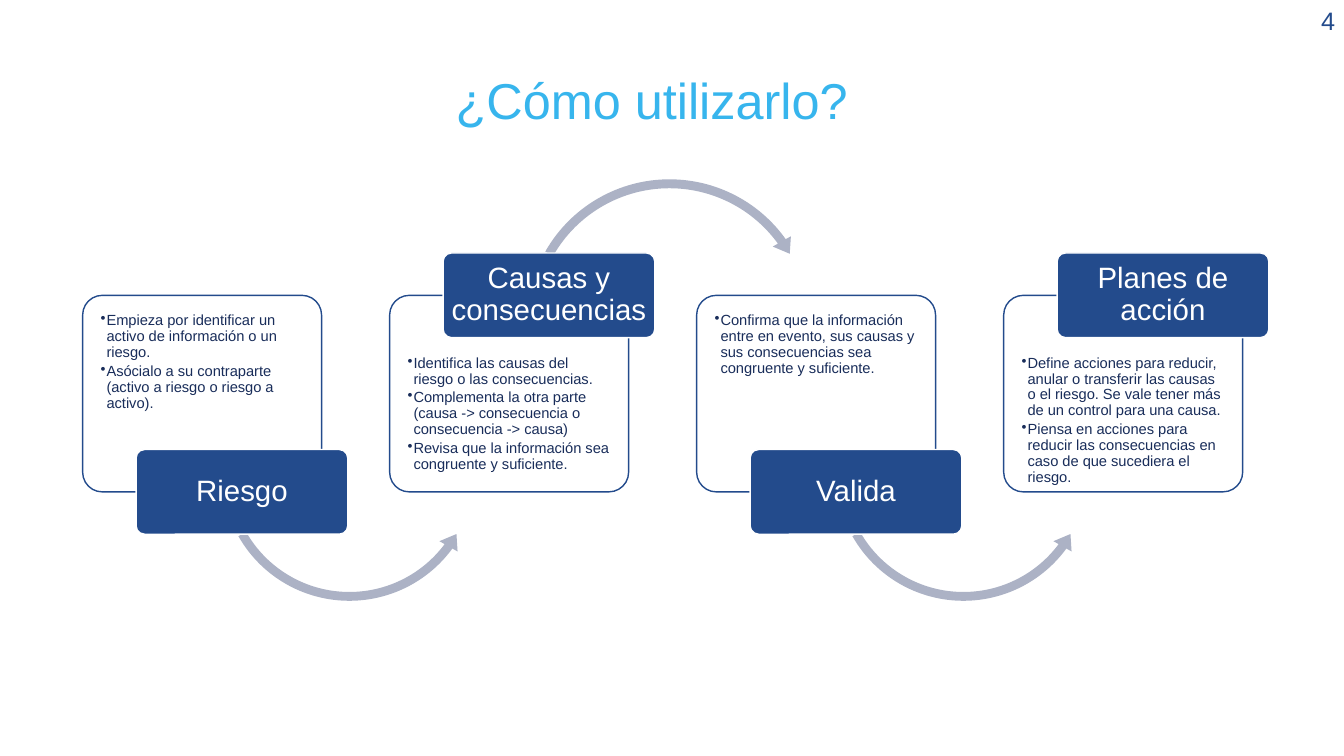
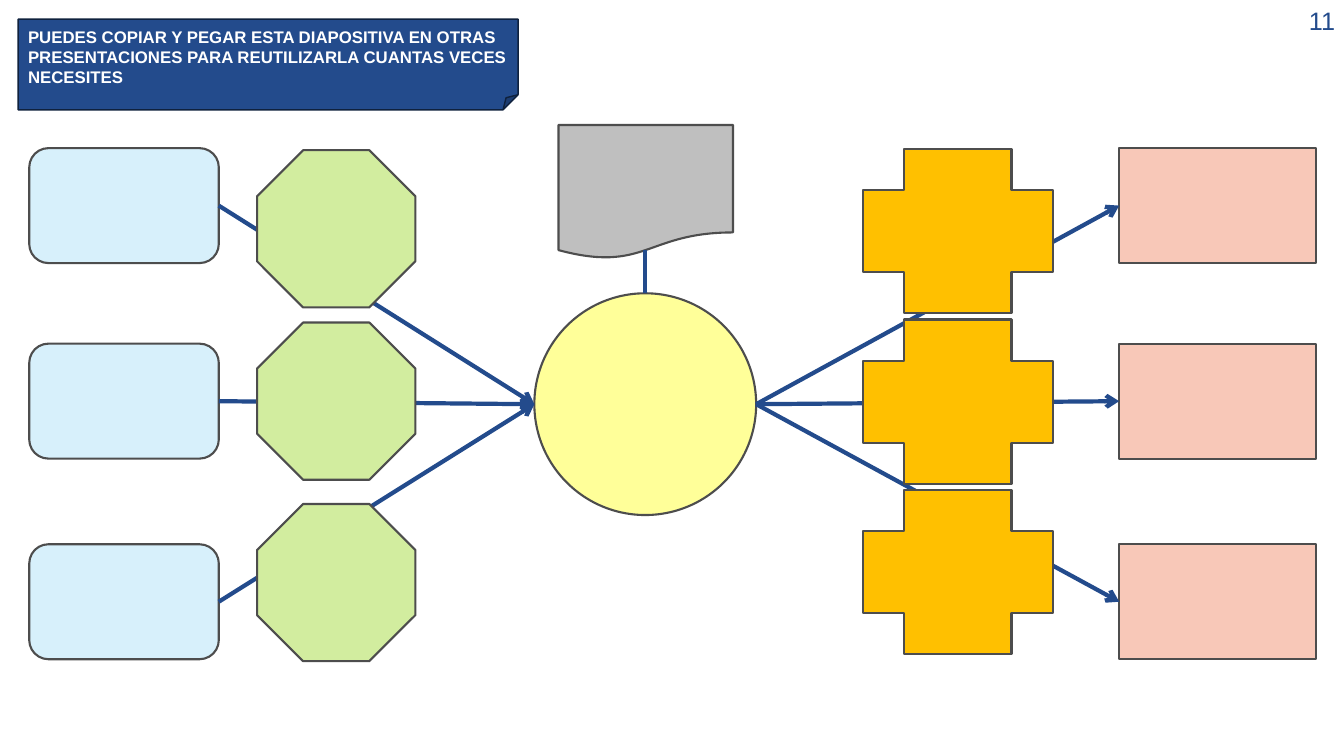
from dataclasses import dataclass

from lxml.etree import SubElement
from pptx import Presentation
from pptx.dml.color import RGBColor
from pptx.enum.shapes import MSO_CONNECTOR, MSO_SHAPE as SHP
from pptx.enum.text import MSO_ANCHOR as ANC, PP_ALIGN as AL
from pptx.oxml.ns import qn
from pptx.util import Inches, Pt


@dataclass(frozen=True)
class Theme:
    font: str = "Arial"
    # Colours
    navy: str = "234B8C"
    sky: str = "37B5ED"
    ink: str = "192D5A"
    white: str = "FFFFFF"
    arrow: str = "ACB2C5"
    outline: str = "4D4D4D"
    note_line: str = "0F213D"
    cause: str = "D7F0FB"
    prevention: str = "D2ED9F"
    event: str = "FFFF99"
    source: str = "BFBFBF"
    mitigation: str = "FFC000"
    effect: str = "F8C8B8"
    # Type sizes
    title_pt: float = 36
    label_pt: float = 21
    number_pt: float = 18
    note_pt: float = 12
    body_pt: float = 10.5


T = Theme()

STEPS = [
    ("Riesgo", [
        "Empieza por identificar un activo de información o un riesgo.",
        "Asócialo a su contraparte (activo a riesgo o riesgo a activo)."]),
    ("Causas y consecuencias", [
        "Identifica las causas del riesgo o las consecuencias.",
        "Complementa la otra parte (causa -> consecuencia o consecuencia -> causa)",
        "Revisa que la información sea congruente y suficiente."]),
    ("Valida", [
        "Confirma que la información entre en evento, sus causas y sus "
        "consecuencias sea congruente y suficiente."]),
    ("Planes de acción", [
        "Define acciones para reducir, anular o transferir las causas o el riesgo. "
        "Se vale tener más de un control para una causa.",
        "Piensa en acciones para reducir las consecuencias en caso de que "
        "sucediera el riesgo."]),
]
NOTE = ("PUEDES COPIAR Y PEGAR ESTA DIAPOSITIVA EN OTRAS PRESENTACIONES "
        "PARA REUTILIZARLA CUANTAS VECES NECESITES")


def rgb(color):
    return RGBColor.from_string(color)


# Shared building blocks
def add_shape(s, kind, box, fill, line=None, width=1.5, adj=()):
    sp = s.shapes.add_shape(kind, *map(Inches, box))
    sp.shadow.inherit = False
    sp.fill.solid()
    sp.fill.fore_color.rgb = rgb(fill)
    if line:
        sp.line.color.rgb = rgb(line)
        sp.line.width = Pt(width)
    else:
        sp.line.fill.background()
    for i, value in enumerate(adj):
        sp.adjustments[i] = value
    return sp


def write(sp, texts, size, color, align=AL.LEFT, anchor=ANC.TOP,
          insets=(0.1, 0.05, 0.1, 0.05), spacing=1, bold=False):
    tf = sp.text_frame
    tf.word_wrap = True
    tf.vertical_anchor = anchor
    (tf.margin_left, tf.margin_top,
     tf.margin_right, tf.margin_bottom) = map(Inches, insets)
    for i, text in enumerate(texts):
        p = tf.add_paragraph() if i else tf.paragraphs[0]
        p.text = text
        p.alignment = align
        p.line_spacing = spacing
        p.font.name = T.font
        p.font.size = Pt(size)
        p.font.bold = bold
        p.font.color.rgb = rgb(color)
    return tf


def add_text(s, box, text, size, color, **style):
    tb = s.shapes.add_textbox(*map(Inches, box))
    write(tb, [text], size, color, **style)


def set_bullet(p):
    p.space_after = Pt(2)
    pPr = p._p.get_or_add_pPr()
    pPr.set("marL", str(Inches(0.06)))
    pPr.set("indent", str(-Inches(0.06)))
    bullet = pPr.makeelement(qn("a:buChar"), {"char": "•"})
    pPr.insert_element_before(bullet, "a:tabLst", "a:defRPr", "a:extLst")


def add_link(s, start, end, arrow=True):
    c = s.shapes.add_connector(MSO_CONNECTOR.STRAIGHT, *map(Inches, start + end))
    c.line.color.rgb = rgb(T.navy)
    c.line.width = Pt(3)
    if arrow:
        SubElement(c.line._get_or_add_ln(), qn("a:tailEnd"), type="arrow")
    SubElement(c._element.spPr, qn("a:effectLst"))
    return c


def new_slide(prs, number):
    s = prs.slides.add_slide(prs.slide_layouts[6])
    add_text(s, (12.42, 0, 0.92, 0.42), number, T.number_pt, T.navy, align=AL.RIGHT)
    return s


# Process slide
def add_step(s, x, y, label, bullets, label_on_top, last):
    # Card with bullets
    card = add_shape(s, SHP.ROUNDED_RECTANGLE, (x, y, 2.37, 1.95),
                     T.white, T.navy, 1, [0.1])
    solid = card._element.spPr.find(qn("a:solidFill"))
    SubElement(solid[0], qn("a:alpha"), val="90000")
    top = 0.54 if label_on_top else 0.12
    tf = write(card, bullets, T.body_pt, T.ink,
               insets=(0.12, top, 0.13, 0), spacing=0.9)
    for p in tf.paragraphs:
        set_bullet(p)
    # Curved arrow to the next step
    if not last and label_on_top:
        add_shape(s, SHP.CIRCULAR_ARROW, (x + 1.3, y - 1.21, 2.95, 2.95), T.arrow,
                  adj=[0.03, 3.64, 194.6, 125.76, 0.035])
    elif not last:
        add_shape(s, SHP.LEFT_CIRCULAR_ARROW, (x + 1.32, y + 0.44, 2.65, 2.65), T.arrow,
                  adj=[0.033, 4.09, 21.84, 90.25, 0.039])
    # Label
    tag = add_shape(s, SHP.ROUNDED_RECTANGLE,
                    (x + 0.53, y + (-0.42 if label_on_top else 1.53), 2.1, 0.84),
                    T.navy, T.white, 1, [0.1])
    write(tag, [label], T.label_pt, T.white, align=AL.CENTER, anchor=ANC.MIDDLE,
          insets=(0.04, 0.03, 0.04, 0.03), spacing=0.9)


def process_slide(prs):
    s = new_slide(prs, "4")
    add_text(s, (0, 0, 13.33, 2.04), "¿Cómo utilizarlo?", T.title_pt, T.sky,
             align=AL.CENTER, anchor=ANC.MIDDLE,
             insets=(0.39, 0.39, 0.79, 0.39), spacing=0.9)
    left, top, pitch = 0.82, 2.93, 3.045
    for i, (label, bullets) in enumerate(STEPS):
        add_step(s, left + i * pitch, top, label, bullets,
                 label_on_top=i % 2 == 1, last=i == len(STEPS) - 1)


# Bow-tie slide
def add_column(s, kind, x, tops, size, fill):
    return [add_shape(s, kind, (x, y) + size, fill, T.outline) for y in tops]


def add_bow_tie(s, x, y):
    """Place causes, event and effects from the top left corner (x, y)."""
    # Event and its source
    event_x, event_y, d = x + 5.01, y + 1.44, 2.2
    mid_x, mid_y = event_x + d / 2, event_y + d / 2
    add_shape(s, SHP.FLOWCHART_CONNECTOR, (event_x, event_y, d, d), T.event, T.outline)
    add_shape(s, SHP.FLOWCHART_DOCUMENT, (x + 5.25, y - 0.23, 1.73, 1.33),
              T.source, T.outline)
    add_link(s, (mid_x, y + 1.01), (mid_x, event_y), arrow=False)

    # Causes and effects
    tops = [y, y + 1.94, y + 3.93]
    causes = add_column(s, SHP.ROUNDED_RECTANGLE, x, tops, (1.88, 1.14), T.cause)
    effects = add_column(s, SHP.RECTANGLE, x + 10.81, tops, (1.95, 1.14), T.effect)
    for top, cause, effect in zip(tops, causes, effects):
        row_y = top + 0.57
        inward = add_link(s, (x + 1.88, row_y), (event_x, mid_y))
        inward.begin_connect(cause, 3)
        outward = add_link(s, (event_x + d, mid_y), (x + 10.81, row_y))
        outward.end_connect(effect, 1)

    # Controls over the links
    add_column(s, SHP.OCTAGON, x + 2.26, [y + 0.02, y + 1.73, y + 3.53],
               (1.57, 1.56), T.prevention)
    add_column(s, SHP.CROSS, x + 8.27, [y + 0.01 + 1.69 * i for i in range(3)],
               (1.88, 1.63), T.mitigation)


def bow_tie_slide(prs):
    s = new_slide(prs, "11")
    add_bow_tie(s, 0.29, 1.47)
    note = add_shape(s, SHP.FOLDED_CORNER, (0.18, 0.19, 4.96, 0.9),
                     T.navy, T.note_line, 1)
    write(note, [NOTE], T.note_pt, T.white, anchor=ANC.MIDDLE, bold=True)


def main():
    prs = Presentation()
    prs.slide_width, prs.slide_height = Inches(13.33), Inches(7.5)
    process_slide(prs)
    bow_tie_slide(prs)
    prs.save("out.pptx")


if __name__ == "__main__":
    main()
